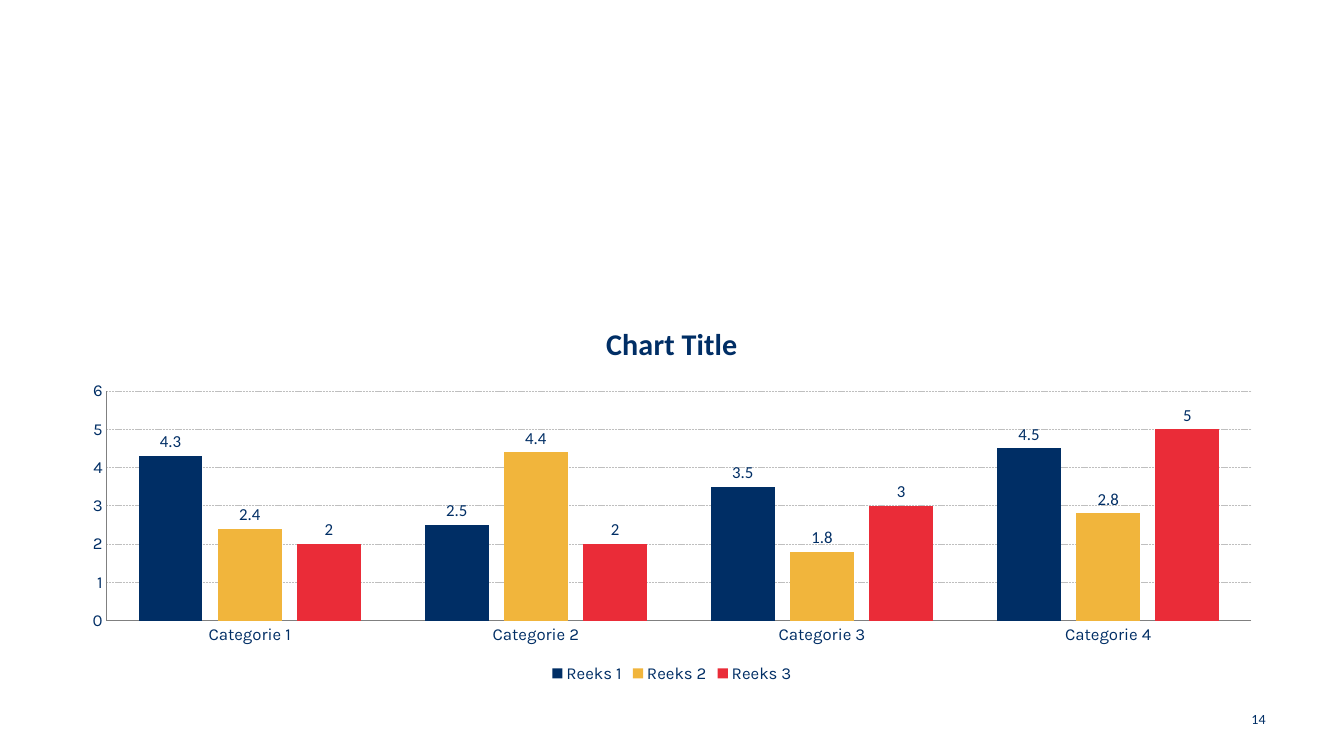
from pptx import Presentation
from pptx.chart.data import CategoryChartData
from pptx.dml.color import RGBColor
from pptx.enum.chart import XL_CHART_TYPE, XL_LABEL_POSITION, XL_LEGEND_POSITION, XL_TICK_MARK
from pptx.enum.dml import MSO_LINE
from pptx.enum.text import MSO_ANCHOR, PP_ALIGN
from pptx.util import Inches, Pt

COLORS = {
    "navy": "002E65",
    "amber": "F1B53C",
    "red": "EA2C38",
    "axis": "808080",
    "grid": "BFBFBF",
}
CATEGORIES = ["Categorie 1", "Categorie 2", "Categorie 3", "Categorie 4"]
SERIES = [
    ("Reeks 1", [4.3, 2.5, 3.5, 4.5], "navy"),
    ("Reeks 2", [2.4, 4.4, 1.8, 2.8], "amber"),
    ("Reeks 3", [2, 2, 3, 5], "red"),
]


def color(name):
    return RGBColor.from_string(COLORS[name])


def style_font(font, name, size, bold=False):
    font.name = name
    font.size = Pt(size)
    font.bold = bold
    font.color.rgb = color("navy")


def style_line(line, name):
    line.color.rgb = color(name)
    line.width = Pt(0.5)


def style_axis(axis):
    axis.major_tick_mark = XL_TICK_MARK.NONE
    axis.minor_tick_mark = XL_TICK_MARK.NONE
    style_font(axis.tick_labels.font, "Karla", 12)
    style_line(axis.format.line, "axis")


def style_series(series, fill_name):
    series.invert_if_negative = False
    series.format.fill.solid()
    series.format.fill.fore_color.rgb = color(fill_name)
    labels = series.data_labels
    labels.show_value = True
    labels.position = XL_LABEL_POSITION.OUTSIDE_END
    style_font(labels.font, "Calibri", 12)


def add_column_chart(page, left, top, width, height):
    data = CategoryChartData()
    data.categories = CATEGORIES
    for name, values, _ in SERIES:
        data.add_series(name, values)
    chart = page.shapes.add_chart(
        XL_CHART_TYPE.COLUMN_CLUSTERED,
        Inches(left), Inches(top), Inches(width), Inches(height), data,
    ).chart
    style_font(chart.font, "Karla", 10)

    # Title and legend
    chart.has_title = True
    chart.chart_title.include_in_layout = False
    span = chart.chart_title.text_frame.paragraphs[0].add_run()
    span.text = "Chart Title"
    style_font(span.font, "Calibri", 21.5, bold=True)
    chart.has_legend = True
    chart.legend.position = XL_LEGEND_POSITION.BOTTOM
    chart.legend.include_in_layout = False
    style_font(chart.legend.font, "Karla", 12)

    # Axes and gridlines
    style_axis(chart.category_axis)
    style_axis(chart.value_axis)
    chart.value_axis.minimum_scale = 0
    chart.value_axis.maximum_scale = 6
    chart.value_axis.major_unit = 1
    chart.value_axis.has_major_gridlines = True
    grid_line = chart.value_axis.major_gridlines.format.line
    style_line(grid_line, "grid")
    grid_line.dash_style = MSO_LINE.SQUARE_DOT

    # Columns
    plot = chart.plots[0]
    plot.vary_by_categories = False
    plot.gap_width = 100
    plot.overlap = -24
    for series, (_, _, fill_name) in zip(plot.series, SERIES):
        style_series(series, fill_name)


def add_page_number(page, text, left, top, width, height):
    box = page.shapes.add_textbox(Inches(left), Inches(top), Inches(width), Inches(height))
    frame = box.text_frame
    frame.word_wrap = True
    frame.vertical_anchor = MSO_ANCHOR.MIDDLE
    para = frame.paragraphs[0]
    para.alignment = PP_ALIGN.RIGHT
    span = para.add_run()
    span.text = text
    style_font(span.font, "Calibri", 10)


def main():
    deck = Presentation()
    deck.slide_width = Inches(13.33)
    deck.slide_height = Inches(7.5)
    page = deck.slides.add_slide(deck.slide_layouts[6])
    add_page_number(page, "14", 9.76, 6.93, 2.89, 0.4)
    add_column_chart(page, 0.68, 3.02, 11.97, 3.8)
    deck.save("out.pptx")


if __name__ == "__main__":
    main()
